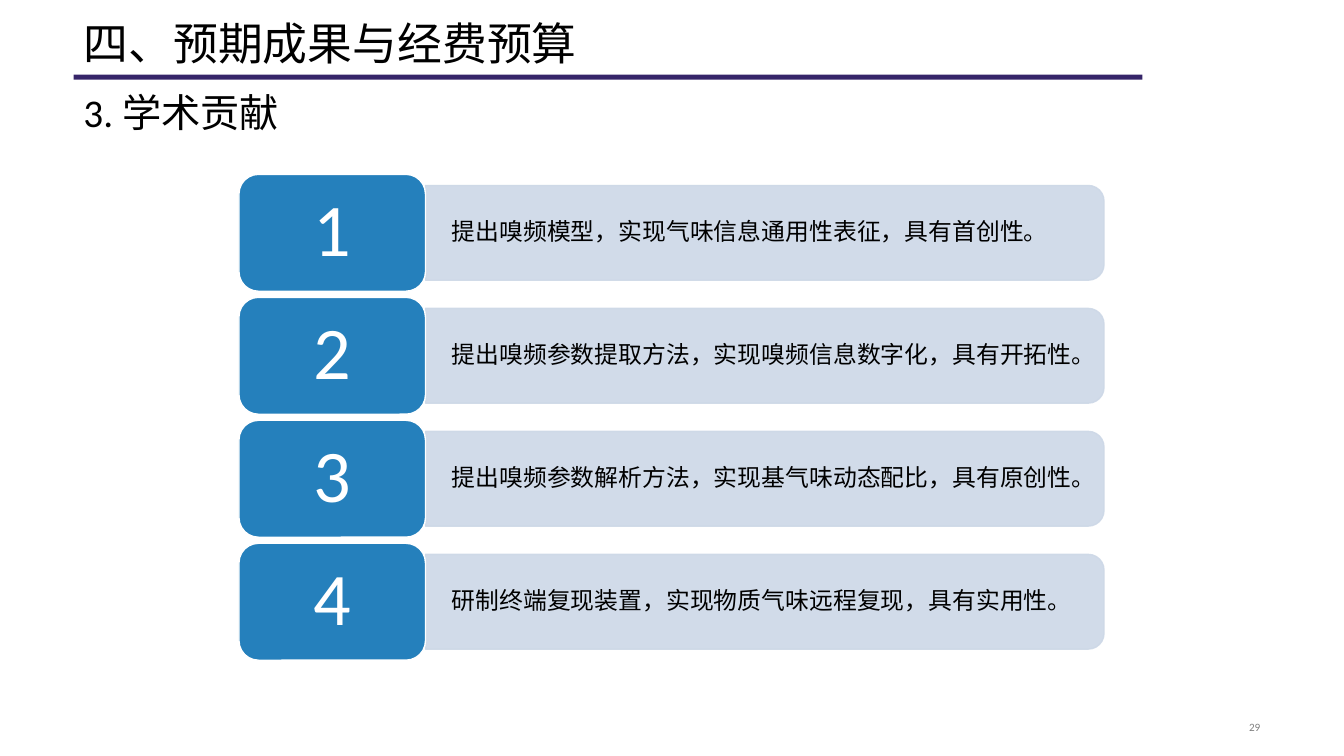
from lxml.etree import SubElement
from pptx import Presentation
from pptx.dml.color import RGBColor
from pptx.enum.shapes import MSO_SHAPE
from pptx.enum.text import MSO_ANCHOR, MSO_AUTO_SIZE, PP_ALIGN
from pptx.oxml.ns import qn
from pptx.util import Inches, Pt

TITLE = "四、预期成果与经费预算"
SUBTITLE = "3. 学术贡献"
PAGE = "29"
CONTRIBUTIONS = [
    "提出嗅频模型，实现气味信息通用性表征，具有首创性。",
    "提出嗅频参数提取方法，实现嗅频信息数字化，具有开拓性。",
    "提出嗅频参数解析方法，实现基气味动态配比，具有原创性。",
    "研制终端复现装置，实现物质气味远程复现，具有实用性。",
]
FONT = "Calibri"
BLACK, WHITE, GRAY = "000000", "FFFFFF", "808080"
PURPLE, BLUE, PALE = "362569", "2580BC", "CDD8E7"

LEFT, WIDTH = 0.73, 11.87
TILE_X, TILE_Y, TILE_W, TILE_H, PITCH = 2.37, 1.73, 1.85, 1.16, 1.22
BAR_W, BAR_H = 6.73, 0.94


def rgb(color):
    return RGBColor.from_string(color)


def write(sp, text, size, color=BLACK, align=PP_ALIGN.LEFT,
          anchor=MSO_ANCHOR.MIDDLE, inset=(0.1, 0.05), spacing=0.9):
    tf = sp.text_frame
    tf.word_wrap = True
    tf.auto_size = MSO_AUTO_SIZE.NONE
    tf.vertical_anchor = anchor
    tf.margin_left = tf.margin_right = Inches(inset[0])
    tf.margin_top = tf.margin_bottom = Inches(inset[1])
    p = tf.paragraphs[0]
    p.alignment = align
    p.line_spacing = spacing
    r = p.add_run()
    r.text = text
    r.font.name = FONT
    r.font.size = Pt(size)
    r.font.color.rgb = rgb(color)


def add_box(s, x, y, w, h):
    return s.shapes.add_textbox(Inches(x), Inches(y), Inches(w), Inches(h))


def add_shape(s, kind, x, y, w, h, fill, line=None, opacity=100):
    sp = s.shapes.add_shape(kind, Inches(x), Inches(y), Inches(w), Inches(h))
    sp.shadow.inherit = False
    sp.fill.solid()
    sp.fill.fore_color.rgb = rgb(fill)
    if line:
        sp.line.color.rgb = rgb(line)
        sp.line.width = Pt(1)
    else:
        sp.line.fill.background()
    if opacity < 100:
        for clr in sp._element.spPr.iter(qn("a:srgbClr")):
            SubElement(clr, qn("a:alpha"), val=str(opacity * 1000))
    return sp


def add_contribution(s, index, text):
    y = TILE_Y + index * PITCH
    mid_y = y + TILE_H / 2
    bar_x = TILE_X + TILE_W
    # The bar is a tall shape turned 90 degrees, so its round corners face right.
    bar = add_shape(s, MSO_SHAPE.ROUND_2_SAME_RECTANGLE,
                    bar_x + (BAR_W - BAR_H) / 2, mid_y - BAR_W / 2,
                    BAR_H, BAR_W, PALE, line=PALE, opacity=90)
    bar.rotation = 90
    label = add_box(s, bar_x, mid_y - BAR_H / 2, BAR_W, BAR_H)
    write(label, text, 17, inset=(0.07, 0.04))
    label.text_frame.margin_left = Inches(0.26)
    tile = add_shape(s, MSO_SHAPE.ROUNDED_RECTANGLE, TILE_X, y, TILE_W, TILE_H,
                     BLUE, line=WHITE)
    write(tile, str(index + 1), 53, color=WHITE, align=PP_ALIGN.CENTER,
          inset=(0.22, 0.11))


def main():
    prs = Presentation()
    prs.slide_width, prs.slide_height = Inches(13.33), Inches(7.5)
    s = prs.slides.add_slide(prs.slide_layouts[5])

    add_shape(s, MSO_SHAPE.RECTANGLE, LEFT, 0.74, 10.6, 0.05, PURPLE)
    title = s.shapes.title
    title.left, title.top = Inches(LEFT), Inches(0)
    title.width, title.height = Inches(WIDTH), Inches(0.75)
    write(title, TITLE, 32, anchor=MSO_ANCHOR.BOTTOM)
    write(add_box(s, LEFT, 0.86, WIDTH, 0.55), SUBTITLE, 28)
    write(add_box(s, 9.42, 7.1, 3.18, 0.23), PAGE, 8, color=GRAY,
          align=PP_ALIGN.RIGHT, spacing=1.0)

    for index, text in enumerate(CONTRIBUTIONS):
        add_contribution(s, index, text)
    prs.save("out.pptx")


if __name__ == "__main__":
    main()
